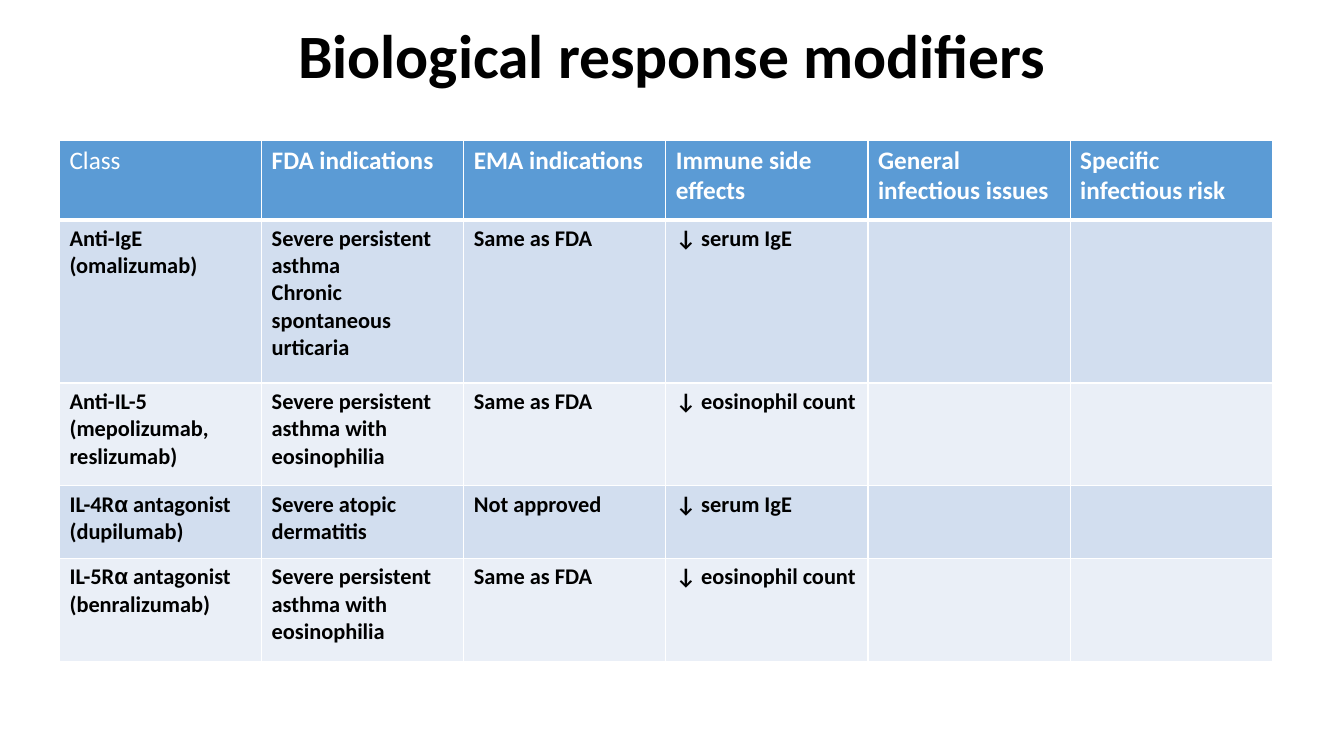
"""Build a slide with a table of biological response modifiers."""
from lxml.etree import fromstring
from pptx import Presentation
from pptx.dml.color import RGBColor
from pptx.enum.text import MSO_ANCHOR as Anchor, PP_ALIGN as Align
from pptx.util import Inches, Pt

COLORS = {"text": "000000", "light": "FFFFFF", "header": "5B9BD5",
          "odd": "D2DEEF", "even": "EAEFF7"}
NAMESPACE = "http://schemas.openxmlformats.org/drawingml/2006/main"
ROW_HEIGHTS = [0.79, 1.62, 1.02, 0.72, 1.02]
COLUMN_WIDTH = 12.03 / 6
ROWS = [
    ["Class", "FDA indications", "EMA indications", "Immune side effects",
     "General infectious issues", "Specific infectious risk"],
    ["Anti-IgE (omalizumab)", "Severe persistent asthma\nChronic spontaneous urticaria",
     "Same as FDA", "↓ serum IgE", "", ""],
    ["Anti-IL-5 (mepolizumab, reslizumab)", "Severe persistent asthma with eosinophilia",
     "Same as FDA", "↓ eosinophil count", "", ""],
    ["IL-4Rα antagonist (dupilumab)", "Severe atopic dermatitis",
     "Not approved", "↓ serum IgE", "", ""],
    ["IL-5Rα antagonist (benralizumab)", "Severe persistent asthma with eosinophilia",
     "Same as FDA", "↓ eosinophil count", "", ""],
]


def format_run(run, size, color, bold=True):
    run.font.name = "Arial" if run.text == "α" else "Calibri"
    run.font.size = Pt(size)
    run.font.bold = bold
    run.font.color.rgb = RGBColor.from_string(COLORS[color])


def add_borders(cell, bottom_width):
    widths = {"lnL": 1, "lnR": 1, "lnT": 1, "lnB": bottom_width}
    for position, (side, width) in enumerate(widths.items()):
        border = fromstring(
            f'<a:{side} xmlns:a="{NAMESPACE}" w="{Pt(width)}"><a:solidFill>'
            f'<a:srgbClr val="{COLORS["light"]}"/></a:solidFill></a:{side}>')
        cell._tc.get_or_add_tcPr().insert(position, border)


presentation = Presentation()
presentation.slide_width = Inches(13.33)
presentation.slide_height = Inches(7.5)
slide = presentation.slides.add_slide(presentation.slide_layouts[6])

title = slide.shapes.add_textbox(Inches(0.92), 0, Inches(11.5), Inches(1.17))
title.text_frame.text = "Biological response modifiers"
title.text_frame.word_wrap = True
title.text_frame.vertical_anchor = Anchor.MIDDLE
heading = title.text_frame.paragraphs[0]
heading.alignment = Align.CENTER
heading.line_spacing = 0.9
format_run(heading.runs[0], 44, "text")

table = slide.shapes.add_table(
    len(ROWS), len(ROWS[0]), Inches(0.59), Inches(1.39),
    Inches(COLUMN_WIDTH * len(ROWS[0])), Inches(sum(ROW_HEIGHTS))).table
for column in table.columns:
    column.width = Inches(COLUMN_WIDTH)

for row_index, (texts, height) in enumerate(zip(ROWS, ROW_HEIGHTS)):
    is_header = row_index == 0
    band = "header" if is_header else "odd" if row_index % 2 else "even"
    size, color = (18, "light") if is_header else (16, "text")
    table.rows[row_index].height = Inches(height)
    for column_index, text in enumerate(texts):
        cell = table.cell(row_index, column_index)
        cell.fill.solid()
        cell.fill.fore_color.rgb = RGBColor.from_string(COLORS[band])
        add_borders(cell, 3 if is_header else 1)
        cell.text_frame.text = text
        for paragraph in cell.text_frame.paragraphs:
            before, alpha, after = paragraph.text.partition("α")
            paragraph.text = before
            for part in filter(None, (alpha, after)):
                paragraph.add_run().text = part
            for run in paragraph.runs:
                format_run(run, size, color, bold=text != "Class")

presentation.save("out.pptx")
